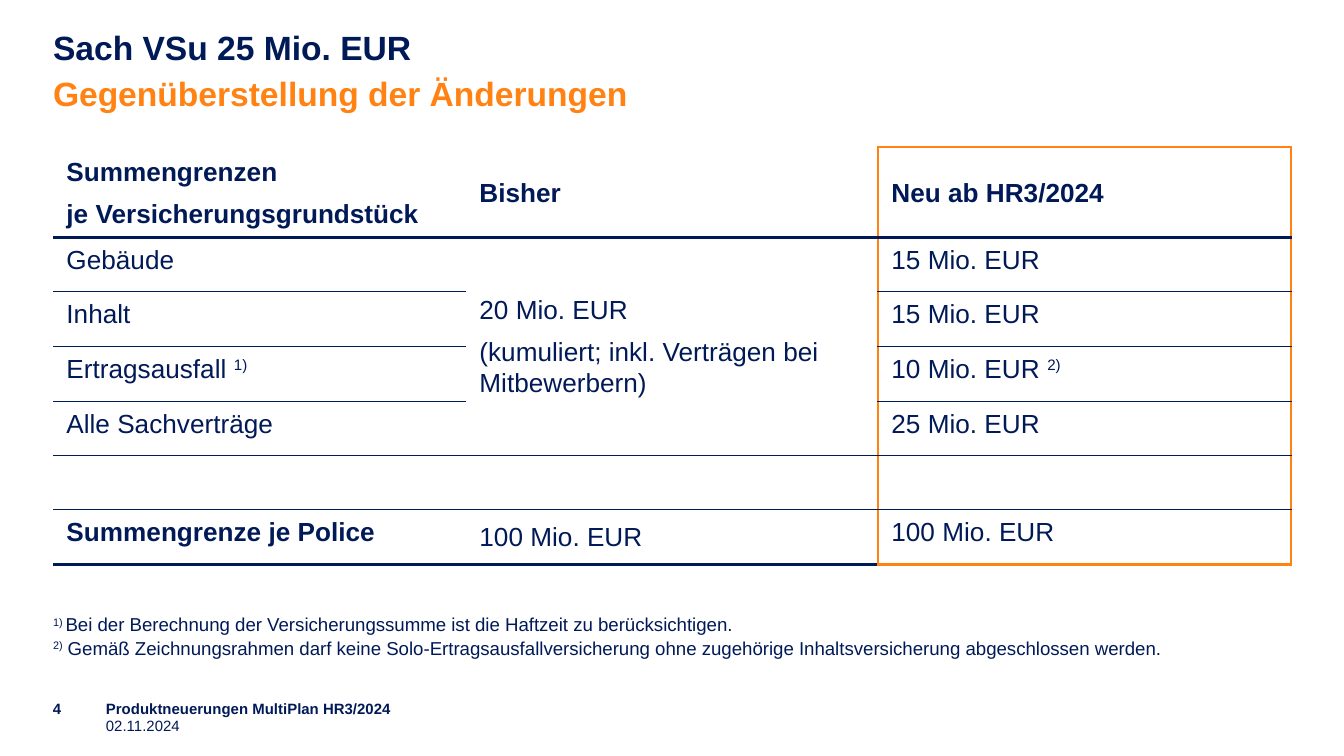
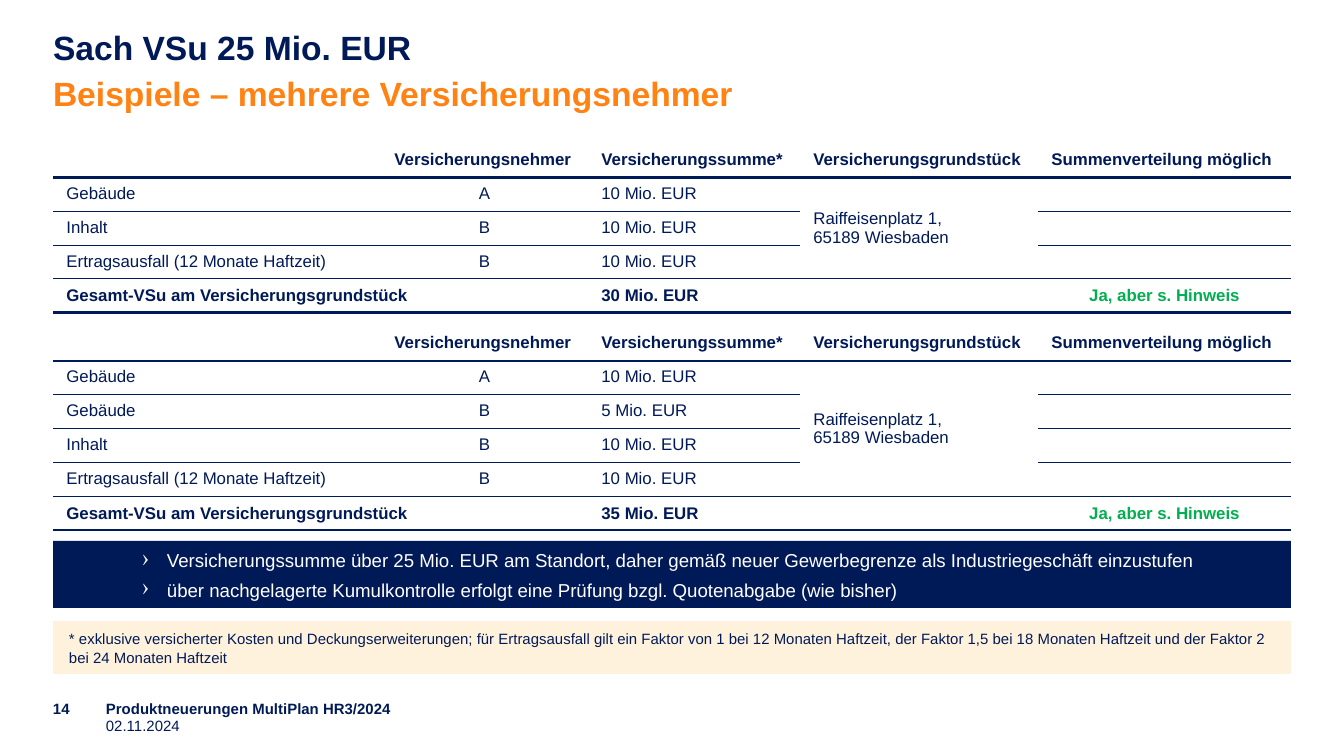
from lxml.etree import SubElement
from pptx import Presentation
from pptx.dml.color import RGBColor
from pptx.enum.shapes import MSO_SHAPE as Shape
from pptx.enum.text import MSO_ANCHOR as Anchor, PP_ALIGN as Align
from pptx.oxml.ns import qn
from pptx.util import Pt

WIDTH, HEIGHT = 1344, 756
EMU_PER_PX = 9144000 / WIDTH
LEFT, CONTENT_WIDTH = 53, 1238
FONT = "Arial"
COLORS = {
    "navy": "001957",
    "orange": "FF8213",
    "cream": "FFF2DC",
    "green": "00B050",
    "white": "FFFFFF",
}
THIN, THICK = ("navy", 0.5), ("navy", 1.5)
ACCENT = ("orange", 1.5)
EXAMPLE_COLUMNS = [328, 207, 212, 238, 253]
EXAMPLE_HEADER = ["", "Versicherungsnehmer", "Versicherungssumme*",
                  "Versicherungsgrundstück", "Summenverteilung möglich"]
ADDRESS = "Raiffeisenplatz 1,\v65189 Wiesbaden"


def px(value):
    return round(value * EMU_PER_PX)


def rgb(name):
    return RGBColor.from_string(COLORS[name])


def split_evenly(total, count):
    """Whole-pixel parts that add up to the total."""
    edges = [round(total * i / count) for i in range(count + 1)]
    return [end - start for start, end in zip(edges, edges[1:])]


def add_bullet(para):
    props = para._p.get_or_add_pPr()
    props.set("marL", str(px(25)))
    props.set("indent", str(-px(25)))
    SubElement(props, qn("a:buSzPct"), val="120000")
    SubElement(props, qn("a:buChar"), char="›")


def write(frame, text, size, color="navy", bold=False, align=Align.LEFT,
          spacing=1.0, before=0, after=0, bullet=False):
    """Fill a frame: newline = paragraph, \\v = line break, ^...^ = superscript."""
    for i, line in enumerate(text.split("\n")):
        para = frame.add_paragraph() if i else frame.paragraphs[0]
        if bullet:
            add_bullet(para)
        para.alignment = align
        para.line_spacing = spacing
        para.space_before = Pt(before if i else 0)
        para.space_after = Pt(after)
        for j, part in enumerate(line.split("^")):
            for k, piece in enumerate(part.split("\v")):
                if k:
                    para.add_line_break()
                if not piece:
                    continue
                span = para.add_run()
                span.text = piece
                span.font.name = FONT
                span.font.size = Pt(size)
                span.font.bold = bold
                span.font.color.rgb = rgb(color)
                if j % 2:
                    span.font._element.set("baseline", "30000")
        if not line:
            SubElement(para._p, qn("a:endParaRPr"), sz=str(size * 100))


def set_frame(frame, anchor, inset_x, inset_y):
    frame.word_wrap = True
    frame.vertical_anchor = anchor
    frame.margin_left = frame.margin_right = px(inset_x)
    frame.margin_top = frame.margin_bottom = px(inset_y)


def add_text(page, box, text, size, anchor=Anchor.TOP, inset=(0, 0), **style):
    label = page.shapes.add_textbox(*map(px, box))
    set_frame(label.text_frame, anchor, *inset)
    write(label.text_frame, text, size, **style)


def add_panel(page, box, color):
    panel = page.shapes.add_shape(Shape.RECTANGLE, *map(px, box))
    panel.shadow.inherit = False
    panel.fill.solid()
    panel.fill.fore_color.rgb = rgb(color)
    panel.line.fill.background()
    return panel


def set_borders(cell, left=None, right=None, top=None, bottom=None):
    props = cell._tc.get_or_add_tcPr()
    for tag, border in zip(("lnL", "lnR", "lnT", "lnB"), (left, right, top, bottom)):
        if border is None:
            line = SubElement(props, qn("a:" + tag), w="0")
            SubElement(line, qn("a:noFill"))
            continue
        color, width = border
        line = SubElement(props, qn("a:" + tag), w=str(Pt(width)))
        fill = SubElement(line, qn("a:solidFill"))
        SubElement(fill, qn("a:srgbClr"), val=COLORS[color])


def add_grid(page, top, columns, heights, merged_column, merged_last, accent=None):
    """Table with horizontal rules; one column is merged from row 1 to merged_last."""
    last = len(heights) - 1
    box = (LEFT, top, sum(columns), sum(heights))
    table = page.shapes.add_table(len(heights), len(columns), *map(px, box)).table
    table.first_row = table.horz_banding = False
    for column, width in zip(table.columns, columns):
        column.width = px(width)
    for row, height in zip(table.rows, heights):
        row.height = px(height)
    table.cell(1, merged_column).merge(table.cell(merged_last, merged_column))
    for r in range(len(heights)):
        for c in range(len(columns)):
            merged = c == merged_column
            upper = None if r == 0 else THICK if r == 1 else THIN
            lower = THICK if r in (0, last) else THIN
            if merged and 1 < r <= merged_last:
                upper = None
            if merged and 1 < r < merged_last:
                lower = None
            if c == accent:
                upper = ACCENT if r == 0 else upper
                lower = ACCENT if r == last else lower
            side = ACCENT if c == accent else None
            right = ACCENT if accent is not None and c + 1 == accent else side
            cell = table.cell(r, c)
            set_borders(cell, side, right, upper, lower)
            cell.fill.background()
    return table


def add_comparison(page, top, rows):
    heights = [86] + split_evenly(327, 6)
    last = len(rows) - 1
    table = add_grid(page, top, split_evenly(CONTENT_WIDTH, 3), heights, 1, 4, accent=2)
    for r, row in enumerate(rows):
        for c, text in enumerate(row):
            cell = table.cell(r, c)
            cell.vertical_anchor = Anchor.MIDDLE if r == 0 or c == 1 else Anchor.TOP
            write(cell.text_frame, text, 14, bold=r == 0 or (r, c) == (last, 0),
                  spacing=1.05, before=6)


def add_example(page, top, height, items, total):
    blank = [""] * 5
    rows = [EXAMPLE_HEADER]
    rows += [[name, holder, amount, "", ""] for name, holder, amount in items]
    rows[1][3] = ADDRESS
    rows.append(["Gesamt-VSu am Versicherungsgrundstück", "", total, "",
                 "Ja, aber s. Hinweis"])
    last = len(rows) - 1
    table = add_grid(page, top, EXAMPLE_COLUMNS, split_evenly(height, len(rows)),
                     3, last - 1)
    table.cell(last, 0).merge(table.cell(last, 1))
    for r, row in enumerate(rows):
        for c, text in enumerate(row):
            cell = table.cell(r, c)
            cell.vertical_anchor = Anchor.MIDDLE if r == last or (r and c == 3) else Anchor.TOP
            write(cell.text_frame, text, 9, bold=r in (0, last),
                  color="green" if (r, c) == (last, 4) else "navy",
                  align=Align.CENTER if r and c in (1, 4) else Align.LEFT)


def add_findings(page, box, text):
    add_panel(page, box, "navy")
    left, top, width, height = box
    indent = 76
    add_text(page, (left + indent, top, width - indent, height), text, 10,
             Anchor.MIDDLE, (13, 7), color="white", spacing=1.05, after=3, bullet=True)


def add_remark(page, box, text):
    frame = add_panel(page, box, "cream").text_frame
    set_frame(frame, Anchor.MIDDLE, 16, 11)
    write(frame, text, 8, spacing=1.05)


def add_page(deck, number, subtitle):
    """Blank page with the shared heading and footer."""
    page = deck.slides.add_slide(deck.slide_layouts[6])
    add_text(page, (LEFT, 27, CONTENT_WIDTH, 41), "Sach VSu 25 Mio. EUR", 18, bold=True)
    add_text(page, (LEFT, 71, CONTENT_WIDTH, 35), subtitle, 18,
             color="orange", bold=True, spacing=1.05)
    footer = [
        (LEFT, 703, 53, str(number), True),
        (106, 703, 625, "Produktneuerungen MultiPlan HR3/2024", True),
        (106, 720, 625, "02.11.2024", False),
    ]
    for left, top, width, text, bold in footer:
        add_text(page, (left, top, width, 9), text, 8, Anchor.MIDDLE,
                 bold=bold, spacing=1.1)
    return page


def build_comparison_page(deck):
    page = add_page(deck, 4, "Gegenüberstellung der Änderungen")
    add_comparison(page, 147, [
        ["Summengrenzen\nje Versicherungsgrundstück", "Bisher", "Neu ab HR3/2024"],
        ["Gebäude", "20 Mio. EUR\n(kumuliert; inkl. Verträgen bei Mitbewerbern)",
         "15 Mio. EUR"],
        ["Inhalt", "", "15 Mio. EUR"],
        ["Ertragsausfall ^1)", "", "10 Mio. EUR ^2)"],
        ["Alle Sachverträge", "", "25 Mio. EUR"],
        ["", "", ""],
        ["Summengrenze je Police", "100 Mio. EUR", "100 Mio. EUR"],
    ])
    add_text(page, (LEFT, 612, CONTENT_WIDTH, 63),
             "^1) ^Bei der Berechnung der Versicherungssumme ist die Haftzeit zu "
             "berücksichtigen.\n"
             "^2)^ Gemäß Zeichnungsrahmen darf keine Solo-Ertragsausfallversicherung "
             "ohne zugehörige Inhaltsversicherung abgeschlossen werden.",
             10, spacing=1.05)


def build_examples_page(deck):
    page = add_page(deck, 14, "Beispiele – mehrere Versicherungsnehmer")
    building = ("Gebäude", "A", "10 Mio. EUR")
    shared = [
        ("Inhalt", "B", "10 Mio. EUR"),
        ("Ertragsausfall (12 Monate Haftzeit)", "B", "10 Mio. EUR"),
    ]
    second_building = ("Gebäude", "B", "5 Mio. EUR")
    add_example(page, 144, 163, [building, *shared], "30 Mio. EUR")
    add_example(page, 327, 201, [building, second_building, *shared], "35 Mio. EUR")
    add_findings(page, (LEFT, 541, CONTENT_WIDTH, 67),
                 "Versicherungssumme über 25 Mio. EUR am Standort, daher gemäß neuer "
                 "Gewerbegrenze als Industriegeschäft einzustufen\n"
                 "über nachgelagerte Kumulkontrolle erfolgt eine Prüfung bzgl. "
                 "Quotenabgabe (wie bisher)")
    add_remark(page, (LEFT, 621, CONTENT_WIDTH, 53),
               "* exklusive versicherter Kosten und Deckungserweiterungen; für "
               "Ertragsausfall gilt ein Faktor von 1 bei 12 Monaten Haftzeit, der Faktor "
               "1,5 bei 18 Monaten Haftzeit und der Faktor 2 bei 24 Monaten Haftzeit")


def main():
    deck = Presentation()
    deck.slide_width, deck.slide_height = px(WIDTH), px(HEIGHT)
    build_comparison_page(deck)
    build_examples_page(deck)
    deck.save("out.pptx")


if __name__ == "__main__":
    main()
